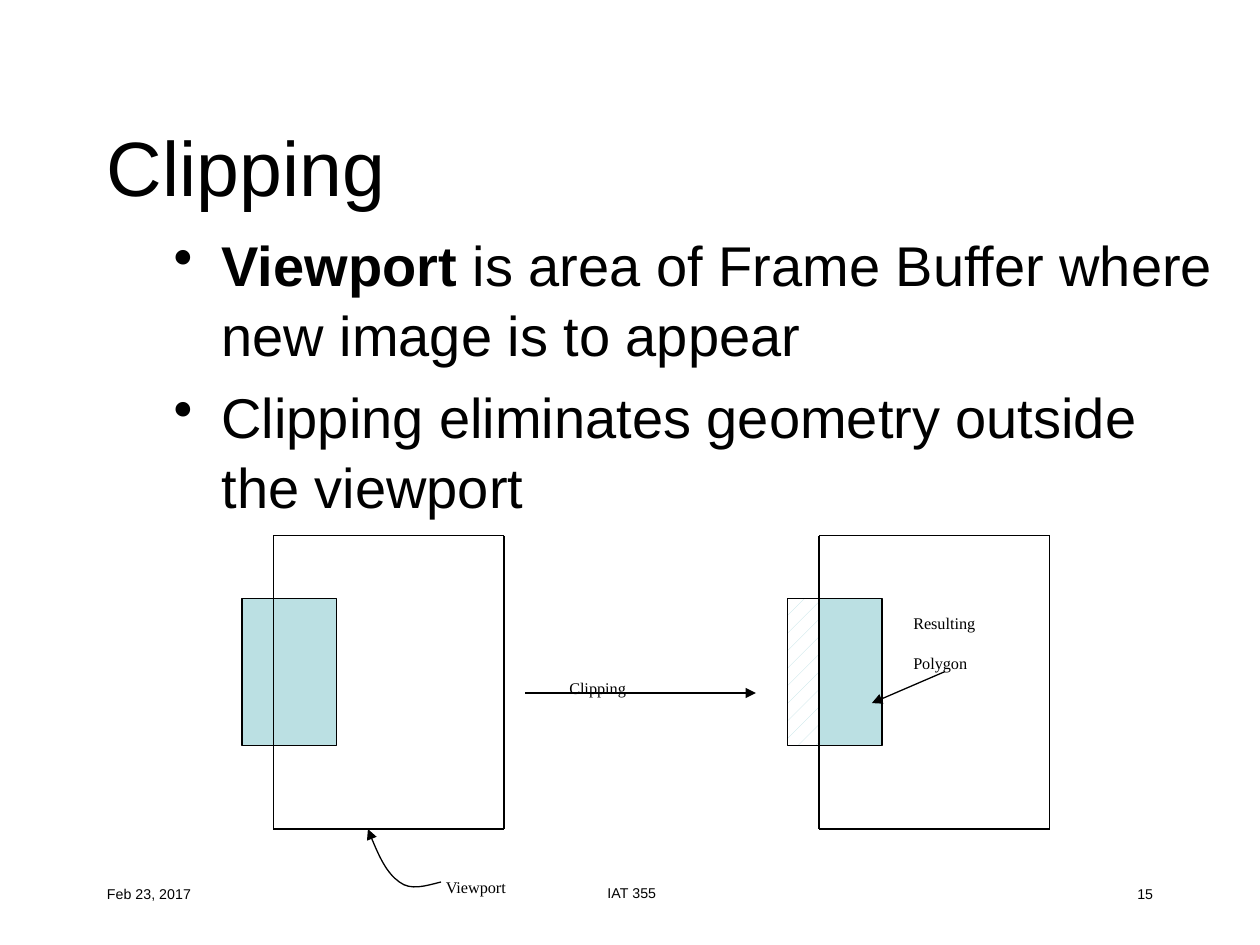
from lxml import etree
from pptx import Presentation
from pptx.dml.color import RGBColor
from pptx.enum.dml import MSO_PATTERN
from pptx.enum.shapes import MSO_CONNECTOR, MSO_SHAPE
from pptx.enum.text import MSO_ANCHOR, PP_ALIGN
from pptx.oxml.ns import qn
from pptx.util import Inches, Pt

BLACK = RGBColor(0x00, 0x00, 0x00)
WHITE = RGBColor(0xFF, 0xFF, 0xFF)
TEAL = RGBColor(0xBB, 0xE0, 0xE3)

prs = Presentation()
prs.slide_width = Inches(10)
prs.slide_height = Inches(7.5)
s = prs.slides.add_slide(prs.slide_layouts[6])


def add_text(box, lines, size, font="Arial", align=PP_ALIGN.LEFT, subscript=False):
    tf = s.shapes.add_textbox(*[Inches(v) for v in box]).text_frame
    tf.word_wrap = True
    tf.text = "\n".join(lines)
    for p in tf.paragraphs:
        p.alignment = align
        for r in p.runs:
            r.font.size = Pt(size)
            r.font.name = font
            r.font.color.rgb = BLACK
            if subscript:
                r.font._element.set("baseline", "-33000")
    return tf


def add_line(x1, y1, x2, y2, arrow=False):
    line = s.shapes.add_connector(
        MSO_CONNECTOR.STRAIGHT, Inches(x1), Inches(y1), Inches(x2), Inches(y2))
    line.line.color.rgb = BLACK
    line.line.width = Pt(0.75)
    if arrow:
        etree.SubElement(line.line._get_or_add_ln(), qn("a:tailEnd"), type="triangle")
    etree.SubElement(line._element.spPr, qn("a:effectLst"))


for box, text, align in [
    ((0.75, 6.83, 2.08, 0.5), "Feb 23, 2017", PP_ALIGN.LEFT),
    ((3.43, 6.82, 3.17, 0.5), "IAT 355", PP_ALIGN.CENTER),
    ((7.17, 6.83, 2.08, 0.5), "15", PP_ALIGN.RIGHT),
]:
    add_text(box, [text], 14, align=align, subscript=True)

title = add_text((0.75, 0.67, 8.5, 1.25), ["Clipping"], 44)
title.vertical_anchor = MSO_ANCHOR.MIDDLE
title.paragraphs[0].line_spacing = 1.05

body = add_text((1.28, 1.75, 8.5, 4.92), [
    "Viewport",
    "Clipping eliminates geometry outside the viewport",
], 32)
r = body.paragraphs[0].add_run()
r.text = " is area of Frame Buffer where new image is to appear"
r.font.size = Pt(32)
r.font.name = "Arial"
r.font.color.rgb = BLACK
body.paragraphs[0].runs[0].font.bold = True
for p in body.paragraphs:
    p.line_spacing = 1.05
    p.space_before = Pt(6.4)
    pPr = p._p.get_or_add_pPr()
    pPr.set("marL", str(Inches(0.38)))
    pPr.set("indent", str(Inches(-0.38)))
    etree.SubElement(pPr, qn("a:buChar"), char="•")

for left, width, viewport_left in [(1.92, 0.75, 2.17), (6.5, 0.5, 6.5), (6.25, 0.25, None)]:
    sp = s.shapes.add_shape(
        MSO_SHAPE.RECTANGLE, Inches(left), Inches(4.75), Inches(width), Inches(1.17))
    sp.shadow.inherit = False
    sp.line.color.rgb = BLACK
    sp.line.width = Pt(0.75)
    if viewport_left is None:
        sp.fill.patterned()
        sp.fill.pattern = MSO_PATTERN.PERCENT_5
        sp.fill.fore_color.rgb = TEAL
        sp.fill.back_color.rgb = WHITE
    else:
        sp.fill.solid()
        sp.fill.fore_color.rgb = TEAL
        x1, x2, y1, y2 = viewport_left, viewport_left + 1.83, 4.25, 6.58
        add_line(x1, y1, x1, y2)
        add_line(x2, y1, x2, y2)
        add_line(x1, y2, x2, y2)
        add_line(x1, y1, x2, y1)

add_line(4.17, 5.5, 6, 5.5, arrow=True)
add_line(7.5, 5.33, 6.92, 5.58, arrow=True)

fb = s.shapes.build_freeform(Inches(3.5), Inches(7))
curve = [(3.38, 7.03), (3.26, 7.07), (3.17, 7), (3.07, 6.93), (2.99, 6.76), (2.92, 6.58)]
fb.add_line_segments([(Inches(x), Inches(y)) for x, y in curve], close=False)
sp = fb.convert_to_shape()
sp.shadow.inherit = False
sp.fill.background()
sp.line.color.rgb = BLACK
sp.line.width = Pt(0.75)
etree.SubElement(sp.line._get_or_add_ln(), qn("a:tailEnd"), type="triangle")
outline = sp._element.find(".//" + qn("a:path"))
segments = outline.findall(qn("a:lnTo"))
for i in range(0, len(segments), 3):
    bezier = etree.SubElement(outline, qn("a:cubicBezTo"))
    for segment in segments[i:i + 3]:
        bezier.append(segment[0])
        outline.remove(segment)

for box, lines in [
    ((3.44, 6.75, 1.06, 0.37), ["Viewport"]),
    ((4.42, 5.17, 1, 0.37), ["Clipping"]),
    ((7.15, 4.65, 1.06, 0.64), ["Resulting", "Polygon"]),
]:
    add_text(box, lines, 16, font="Times New Roman", subscript=True)

prs.save("out.pptx")
